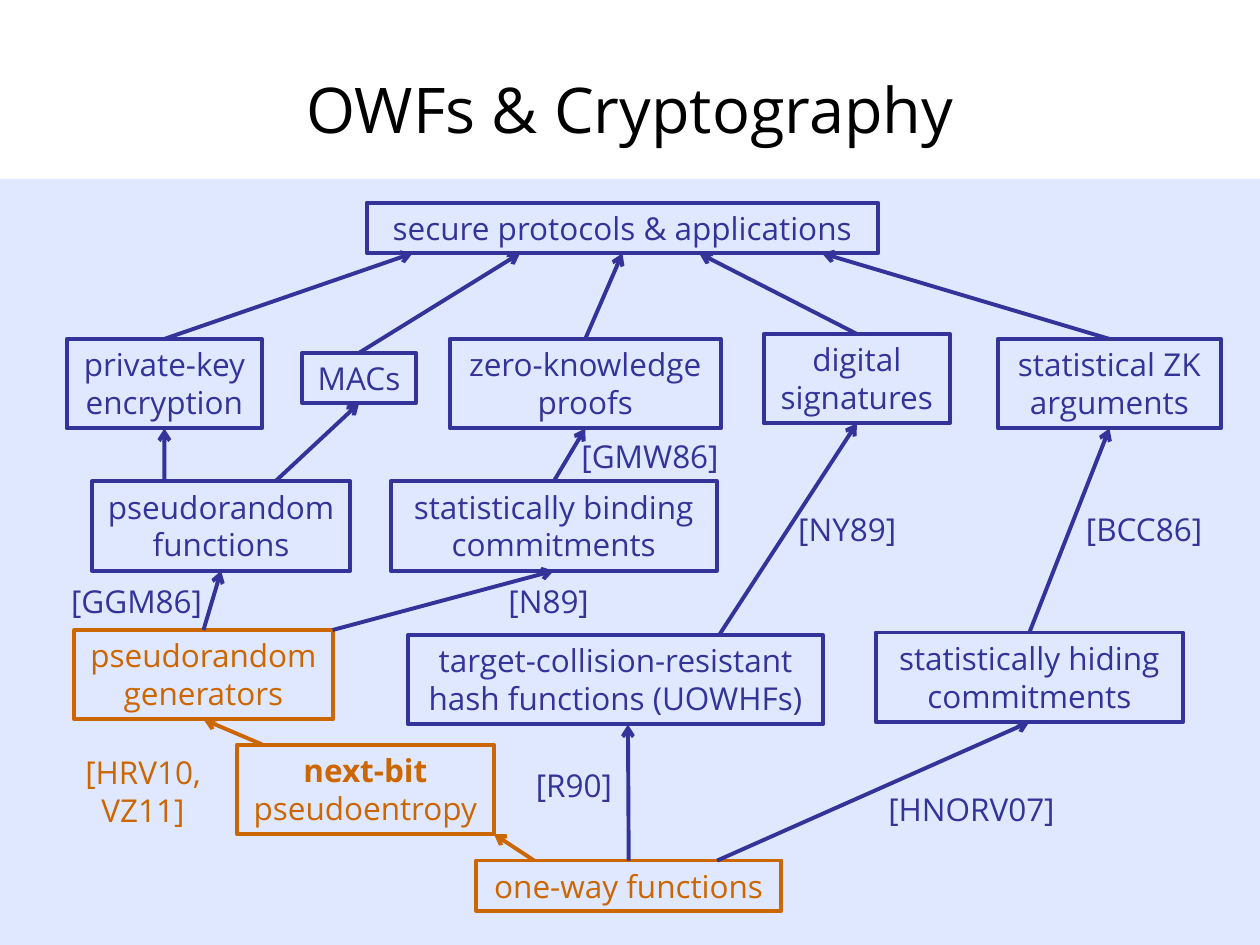
from lxml import etree
from pptx import Presentation
from pptx.dml.color import RGBColor
from pptx.enum.shapes import MSO_CONNECTOR, MSO_SHAPE
from pptx.enum.text import MSO_ANCHOR, MSO_AUTO_SIZE, PP_ALIGN
from pptx.oxml.ns import qn
from pptx.util import Inches, Pt

RECTANGLE = MSO_SHAPE.RECTANGLE
STRAIGHT = MSO_CONNECTOR.STRAIGHT
CENTER = PP_ALIGN.CENTER
MIDDLE = MSO_ANCHOR.MIDDLE
FIT_SHAPE = MSO_AUTO_SIZE.SHAPE_TO_FIT_TEXT
TOP_SIDE, BOTTOM_SIDE = 0, 2

WIDTH, HEIGHT = Inches(10), Inches(7.5)
COLUMNS, ROWS = 100, 75
FONT = "Open Sans"
BLACK, BLUE, ORANGE, BAND = "000000", "333399", "CC6600", "3366FF"
LINE_WIDTH = Pt(2.25)
TEXT_ROWS = {1: 4, 2: 7.1}

# key: (left column, top row, columns wide, colour, lines of text)
NODES = {
    "owf": (37.8, 68.3, 24.2, ORANGE, ["one-way functions"]),
    "entropy": (18.8, 59.1, 20.4, ORANGE, ["next-bit", "pseudoentropy"]),
    "generators": (5.9, 50, 20.5, ORANGE, ["pseudorandom", "generators"]),
    "hash": (32.4, 50.4, 32.9, BLUE, ["target-collision-resistant", "hash functions (UOWHFs)"]),
    "hiding": (69.5, 50.2, 24.4, BLUE, ["statistically hiding", "commitments"]),
    "functions": (7.3, 38.2, 20.5, BLUE, ["pseudorandom", "functions"]),
    "binding": (31, 38.2, 25.9, BLUE, ["statistically binding", "commitments"]),
    "encryption": (5.3, 26.9, 15.5, BLUE, ["private-key", "encryption"]),
    "macs": (24, 28, 9, BLUE, ["MACs"]),
    "proofs": (35.7, 26.9, 21.5, BLUE, ["zero-knowledge", "proofs"]),
    "signatures": (60.6, 26.5, 14.8, BLUE, ["digital", "signatures"]),
    "arguments": (79.2, 26.9, 17.7, BLUE, ["statistical ZK", "arguments"]),
    "protocols": (29.1, 16.1, 40.6, BLUE, ["secure protocols & applications"]),
}
BOLD_LINES = {"next-bit"}

# (from, share of its top side, to, share of its bottom side, colour)
ARROWS = [
    ("owf", 0.19, "entropy", 1, ORANGE),
    ("entropy", 0.1, "generators", 0.5, ORANGE),
    ("owf", 0.5, "hash", 0.53, BLUE),
    ("owf", 0.79, "hiding", 0.5, BLUE),
    ("generators", 0.5, "functions", 0.5, BLUE),
    ("generators", 1, "binding", 0.5, BLUE),
    ("hash", 0.75, "signatures", 0.5, BLUE),
    ("hiding", 0.5, "arguments", 0.5, BLUE),
    ("functions", 0.28, "encryption", 0.5, BLUE),
    ("functions", 0.71, "macs", 0.5, BLUE),
    ("binding", 0.5, "proofs", 0.5, BLUE),
    ("encryption", 0.5, "protocols", 0.09, BLUE),
    ("macs", 0.5, "protocols", 0.3, BLUE),
    ("proofs", 0.5, "protocols", 0.5, BLUE),
    ("signatures", 0.5, "protocols", 0.65, BLUE),
    ("arguments", 0.5, "protocols", 0.89, BLUE),
]

CITATIONS = [
    (5.4, 59.3, 11.9, ORANGE, ["[HRV10,", "VZ11]"]),
    (41.3, 60.3, 8.5, BLUE, ["[R90]"]),
    (69.2, 62.2, 15.8, BLUE, ["[HNORV07]"]),
    (4.5, 45.7, 12.7, BLUE, ["[GGM86]"]),
    (39.2, 45.7, 8.7, BLUE, ["[N89]"]),
    (45.1, 34.2, 13, BLUE, ["[GMW86]"]),
    (62.1, 40, 10.3, BLUE, ["[NY89]"]),
    (84.9, 40, 11.8, BLUE, ["[BCC86]"]),
]


def color(value):
    """Turn a hex string into a colour."""
    return RGBColor.from_string(value)


def place(left, top, wide, high):
    """Turn grid columns and rows into slide lengths."""
    return (int(WIDTH * left / COLUMNS), int(HEIGHT * top / ROWS),
            int(WIDTH * wide / COLUMNS), int(HEIGHT * high / ROWS))


def write_lines(box, lines, size, ink):
    """Write each line as a centred paragraph."""
    frame = box.text_frame
    for index, line in enumerate(lines):
        para = frame.add_paragraph() if index else frame.paragraphs[0]
        para.alignment = CENTER
        span = para.add_run()
        span.text = line
        span.font.name = FONT
        span.font.size = Pt(size)
        span.font.bold = line in BOLD_LINES
        span.font.color.rgb = color(ink)


def fit_text(box, lines, ink):
    """Write unwrapped body text in a box that fits it."""
    box.text_frame.word_wrap = False
    box.text_frame.auto_size = FIT_SHAPE
    box.text_frame.vertical_anchor = MSO_ANCHOR.TOP
    write_lines(box, lines, 18, ink)


def add_band(page, area):
    """Add the pale panel behind the diagram."""
    box = page.shapes.add_shape(RECTANGLE, *place(*area))
    box.shadow.inherit = False
    box.line.fill.background()
    box.fill.solid()
    box.fill.fore_color.rgb = color(BAND)
    tint = next(box.element.spPr.iter(qn("a:srgbClr")))
    etree.SubElement(tint, qn("a:alpha"), val="15000")


def add_title(page, area, title):
    """Add the slide title."""
    box = page.shapes.add_textbox(*place(*area))
    box.text_frame.word_wrap = True
    box.text_frame.vertical_anchor = MIDDLE
    write_lines(box, [title], 36, BLACK)


def add_node(page, left, top, wide, ink, lines):
    """Add an outlined box naming one primitive."""
    box = page.shapes.add_shape(RECTANGLE, *place(left, top, wide, TEXT_ROWS[len(lines)]))
    box.shadow.inherit = False
    box.fill.background()
    box.line.color.rgb = color(ink)
    box.line.width = LINE_WIDTH
    fit_text(box, lines, ink)
    return box


def add_citation(page, left, top, wide, ink, lines):
    """Add the reference beside an arrow."""
    box = page.shapes.add_textbox(*place(left, top, wide, TEXT_ROWS[len(lines)]))
    fit_text(box, lines, ink)


def add_arrow(page, source, start, target, end, ink):
    """Draw an arrow from the top of one box to the bottom of another."""
    arrow = page.shapes.add_connector(
        STRAIGHT,
        int(source.left + source.width * start), source.top,
        int(target.left + target.width * end), target.top + target.height)
    if start == 0.5:
        arrow.begin_connect(source, TOP_SIDE)
    if end == 0.5:
        arrow.end_connect(target, BOTTOM_SIDE)
    arrow.line.color.rgb = color(ink)
    arrow.line.width = LINE_WIDTH
    etree.SubElement(arrow.line._get_or_add_ln(), qn("a:tailEnd"), type="arrow")
    etree.SubElement(arrow._element.spPr, qn("a:effectLst"))


def add_diagram(page):
    """Place the boxes, arrows and references."""
    boxes = {key: add_node(page, *node) for key, node in NODES.items()}
    for source, start, target, end, ink in ARROWS:
        add_arrow(page, boxes[source], start, boxes[target], end, ink)
    for citation in CITATIONS:
        add_citation(page, *citation)


def main():
    """Build and save the slide."""
    deck = Presentation()
    deck.slide_width, deck.slide_height = WIDTH, HEIGHT
    page = deck.slides.add_slide(deck.slide_layouts[6])
    add_band(page, (0, 14.2, COLUMNS, ROWS - 14.2))
    add_title(page, (5, 3.6, 90, 10), "OWFs & Cryptography")
    add_diagram(page)
    deck.save("out.pptx")


if __name__ == "__main__":
    main()
